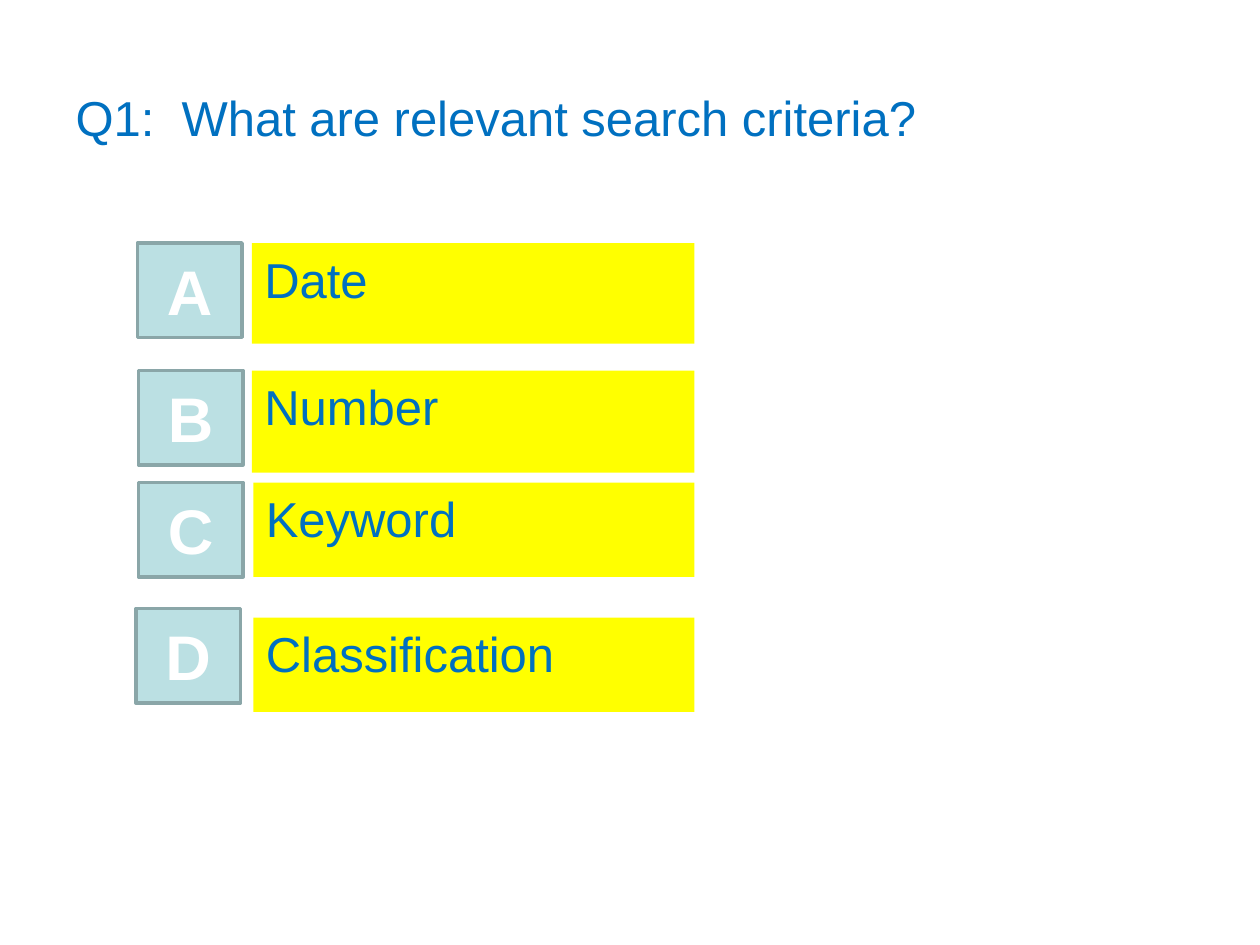
from dataclasses import dataclass

from pptx import Presentation
from pptx.dml.color import RGBColor
from pptx.enum import shapes, text
from pptx.util import Cm, Pt

HUES = {
    "blue": "0070C0",
    "yellow": "FFFF00",
    "aqua": "BBE0E3",
    "edge": "8AA6A8",
    "white": "FFFFFF",
}
FONT = "Arial"
RIGHT = 14
KEY_W, KEY_H = 2.11, 1.9


@dataclass
class Choice:
    key: str
    label: str
    key_x: float
    key_y: float
    bar_x: float
    bar_y: float
    bar_h: float


CHOICES = [
    Choice("A", "Date", 2.77, 4.9, 5.08, 4.9, 2.03),
    Choice("B", "Number", 2.79, 7.47, 5.08, 7.47, 2.06),
    Choice("C", "Keyword", 2.79, 9.73, 5.11, 9.73, 1.9),
    Choice("D", "Classification", 2.74, 12.27, 5.11, 12.45, 1.9),
]


def hue(name: str) -> RGBColor:
    return RGBColor.from_string(HUES[name])


def write(frame, words: str, size: int, color: str, align, anchor, bold: bool = False) -> None:
    frame.word_wrap = True
    frame.vertical_anchor = anchor
    para = frame.paragraphs[0]
    para.alignment = align
    para.space_before = Pt(0)
    run = para.add_run()
    run.text = words
    font = run.font
    font.name, font.size, font.bold = FONT, Pt(size), bold
    font.color.rgb = hue(color)


def block(slide, kind, x: float, y: float, w: float, h: float, fill: str):
    shape = slide.shapes.add_shape(kind, Cm(x), Cm(y), Cm(w), Cm(h))
    shape.shadow.inherit = False
    shape.fill.solid()
    shape.fill.fore_color.rgb = hue(fill)
    return shape


def draw(slide, item: Choice) -> None:
    bar = block(slide, shapes.MSO_SHAPE.RECTANGLE, item.bar_x, item.bar_y,
                RIGHT - item.bar_x, item.bar_h, "yellow")
    bar.line.fill.background()
    write(bar.text_frame, item.label, 28, "blue", text.PP_ALIGN.LEFT, text.MSO_ANCHOR.TOP)

    key = block(slide, shapes.MSO_SHAPE.ACTION_BUTTON_CUSTOM, item.key_x, item.key_y,
                KEY_W, KEY_H, "aqua")
    key.line.color.rgb = hue("edge")
    key.line.width = Pt(2)
    write(key.text_frame, item.key, 36, "white", text.PP_ALIGN.CENTER,
          text.MSO_ANCHOR.MIDDLE, bold=True)


def main() -> None:
    deck = Presentation()
    deck.slide_width, deck.slide_height = Cm(25.4), Cm(19.05)
    slide = deck.slides.add_slide(deck.slide_layouts[5])
    title = slide.shapes.title
    title.left, title.top, title.width, title.height = Cm(1.27), Cm(0.76), Cm(22.86), Cm(3.18)
    write(title.text_frame, "Q1:  What are relevant search criteria?", 28, "blue",
          text.PP_ALIGN.LEFT, text.MSO_ANCHOR.MIDDLE)
    for item in CHOICES:
        draw(slide, item)
    deck.save("out.pptx")


if __name__ == "__main__":
    main()
